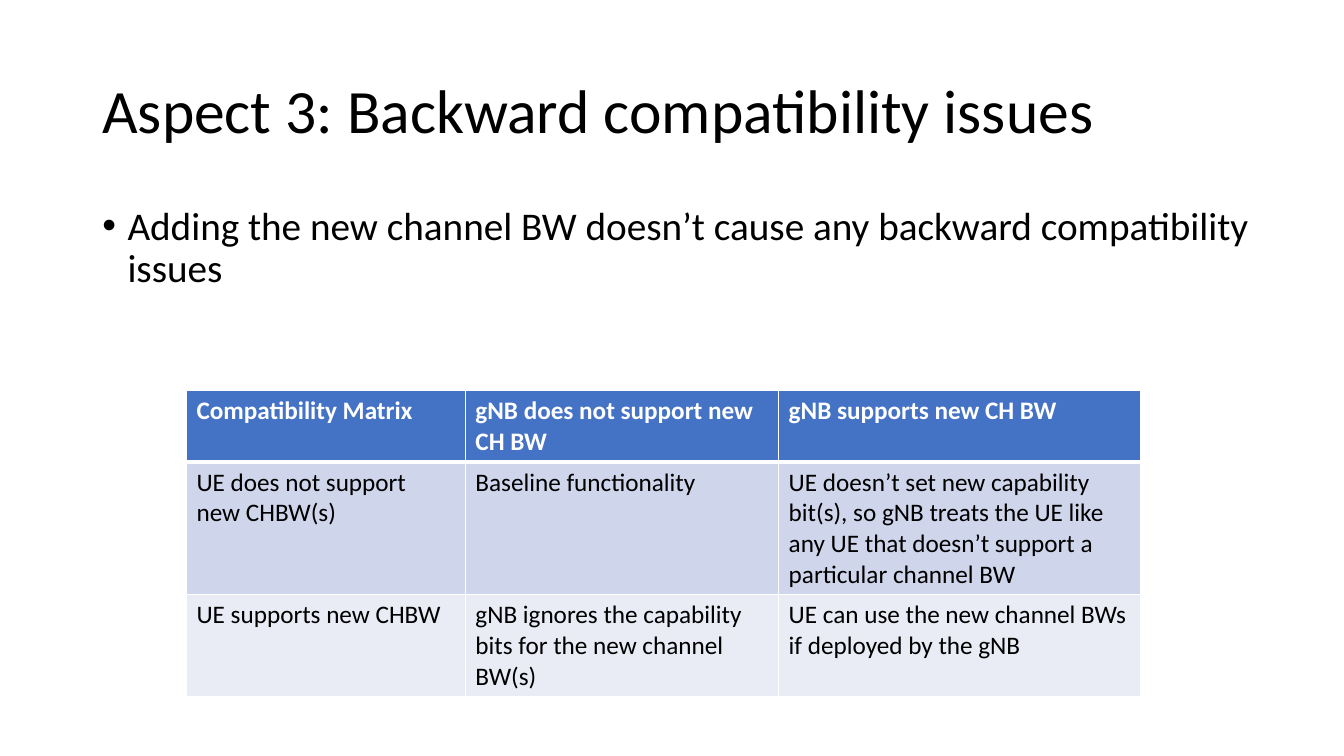
from dataclasses import dataclass

from lxml import etree
from pptx import Presentation
from pptx import util as u
from pptx.dml.color import RGBColor
from pptx.enum import text
from pptx.oxml import ns

GRID_COLUMNS, GRID_ROWS = 160, 90


@dataclass(frozen=True)
class Theme:
    font: str = "Calibri"
    ink: str = "000000"
    paper: str = "FFFFFF"
    header: str = "4472C4"
    bands: tuple = ("CFD5EA", "E9EBF5")
    title_size: int = 44
    body_size: int = 28
    table_size: int = 18
    rule: int = 1
    header_rule: int = 3


def apply_format(target, values):
    for name, value in values.items():
        setattr(target, name, value)


def add_element(parent, tag, **attributes):
    return etree.SubElement(parent, ns.qn(tag), attributes)


class SlideBuilder:
    def __init__(self, presentation, theme):
        self.theme = theme
        self.column = presentation.slide_width / GRID_COLUMNS
        self.row = presentation.slide_height / GRID_ROWS
        self.slide = presentation.slides.add_slide(presentation.slide_layouts[6])

    def place(self, left, top, width, height):
        return (round(left * self.column), round(top * self.row),
                round(width * self.column), round(height * self.row))

    def style(self, paragraph, size, color, bold=False):
        apply_format(paragraph.font, {"name": self.theme.font, "size": u.Pt(size), "bold": bold})
        paragraph.font.color.rgb = RGBColor.from_string(color)

    def text_box(self, words, area, size, anchor, bullet=False):
        frame = self.slide.shapes.add_textbox(*self.place(*area)).text_frame
        apply_format(frame, {"word_wrap": True, "vertical_anchor": anchor})
        paragraph = frame.paragraphs[0]
        apply_format(paragraph, {"text": words, "line_spacing": 0.9})
        if bullet:
            properties = paragraph._p.get_or_add_pPr()
            indent = u.Inches(0.25)
            properties.set("marL", str(indent))
            properties.set("indent", str(-indent))
            add_element(properties, "a:buFont", typeface="Arial")
            add_element(properties, "a:buChar", char="•")
        self.style(paragraph, size, self.theme.ink)

    def border(self, cell, bottom):
        properties = cell._tc.get_or_add_tcPr()
        for side in "LRTB":
            width = bottom if side == "B" else self.theme.rule
            line = add_element(properties, f"a:ln{side}", w=str(u.Pt(width)))
            fill = add_element(line, "a:solidFill")
            add_element(fill, "a:srgbClr", val=self.theme.paper)

    def table(self, rows, left, top, widths, heights):
        area = self.place(left, top, sum(widths), sum(heights))
        table = self.slide.shapes.add_table(len(rows), len(widths), *area).table
        for column, width in zip(table.columns, widths):
            column.width = round(width * self.column)
        for index, (row, height, entries) in enumerate(zip(table.rows, heights, rows)):
            row.height = round(height * self.row)
            for cell, words in zip(row.cells, entries):
                self.cell(cell, words, index)

    def cell(self, cell, words, index):
        theme = self.theme
        heading = index == 0
        cell.text = words
        self.border(cell, theme.header_rule if heading else theme.rule)
        cell.fill.solid()
        color = theme.header if heading else theme.bands[(index - 1) % len(theme.bands)]
        cell.fill.fore_color.rgb = RGBColor.from_string(color)
        self.style(cell.text_frame.paragraphs[0], theme.table_size,
                   theme.paper if heading else theme.ink, heading)


COMPATIBILITY = [
    ("Compatibility Matrix", "gNB does not support new CH BW", "gNB supports new CH BW"),
    ("UE does not support new CHBW(s)", "Baseline functionality",
     "UE doesn’t set new capability bit(s), so gNB treats the UE like any UE "
     "that doesn’t support a particular channel BW"),
    ("UE supports new CHBW", "gNB ignores the capability bits for the new channel BW(s)",
     "UE can use the new channel BWs if deployed by the gNB"),
]


def main():
    presentation = Presentation()
    apply_format(presentation, {"slide_width": u.Inches(13.33), "slide_height": u.Inches(7.5)})
    theme = Theme()
    builder = SlideBuilder(presentation, theme)
    builder.text_box("Aspect 3: Backward compatibility issues", (11, 4.8, 138, 17.4),
                     theme.title_size, text.MSO_ANCHOR.MIDDLE)
    builder.text_box("Adding the new channel BW doesn’t cause any backward compatibility issues",
                     (11, 24, 140, 57), theme.body_size, text.MSO_ANCHOR.TOP, bullet=True)
    builder.table(COMPATIBILITY, 22.2, 46.5, (33.2, 37.3, 43.1), (8.5, 15.8, 12.1))
    presentation.save("out.pptx")


if __name__ == "__main__":
    main()
